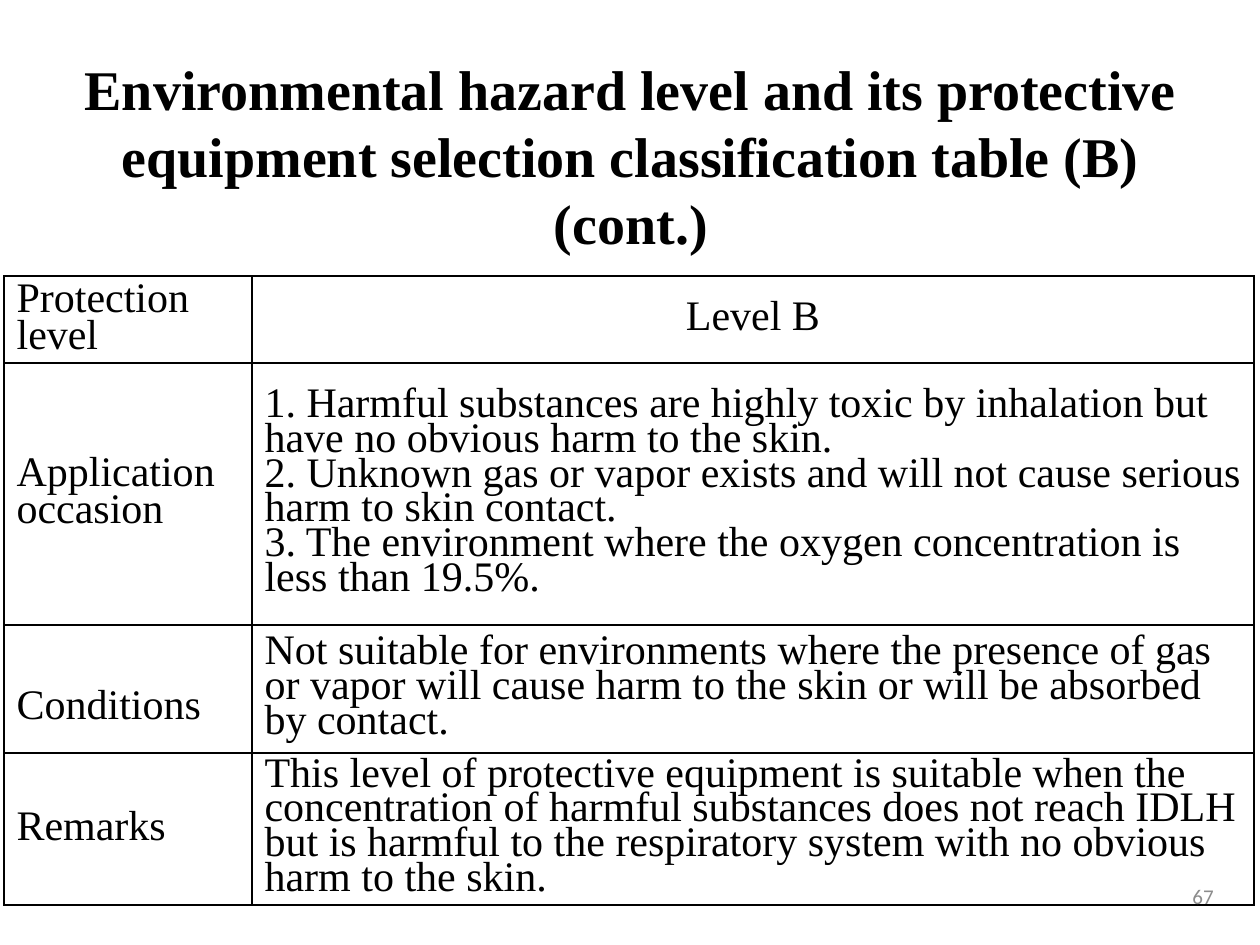
import dataclasses

import lxml.etree
import pptx
import pptx.dml.color
import pptx.enum.text
import pptx.oxml.ns
import pptx.util

EMU_PER_PX = 914400 / 126
ALIGN = pptx.enum.text.PP_ALIGN
ANCHOR = pptx.enum.text.MSO_ANCHOR


@dataclasses.dataclass(frozen=True)
class Theme:
    serif: str = "Times New Roman"
    sans: str = "Calibri"
    ink: str = "000000"
    muted: str = "8C8C8C"
    paper: str = "FFFFFF"
    title_size: int = 32
    table_size: int = 24
    number_size: int = 12
    border_width: int = 1
    label_spacing: float = 0.8
    detail_spacing: float = 0.75


THEME = Theme()

ROWS = [
    ("Protection level", ["Level B"]),
    ("Application occasion", [
        " Harmful substances are highly toxic by inhalation but have no obvious harm to the skin.",
        " Unknown gas or vapor exists and will not cause serious harm to skin contact.",
        " The environment where the oxygen concentration is less than 19.5%.",
    ]),
    ("Conditions", [
        "Not suitable for environments where the presence of gas or vapor will cause "
        "harm to the skin or will be absorbed by contact.",
    ]),
    ("Remarks", [
        "This level of protective equipment is suitable when the concentration of harmful "
        "substances does not reach IDLH but is harmful to the respiratory system with no "
        "obvious harm to the skin.",
    ]),
]
COLUMN_WIDTHS = [248, 1002]
ROW_HEIGHTS = [87, 262, 128, 152]
CONDITIONS_LABEL_DROP = 46


def px(length):
    return pptx.util.Emu(round(length * EMU_PER_PX))


def color(value):
    return pptx.dml.color.RGBColor.from_string(value)


def style_paragraph(para, face, size, ink, align, bold=False):
    para.alignment = align
    para.font.name = face
    para.font.size = pptx.util.Pt(size)
    para.font.bold = bold
    para.font.color.rgb = color(ink)


def add_text(page, box, text, anchor, **style):
    shape = page.shapes.add_textbox(*map(px, box))
    frame = shape.text_frame
    frame.word_wrap = True
    frame.vertical_anchor = anchor
    para = frame.paragraphs[0]
    para.text = text
    style_paragraph(para, **style)


def add_title(page, box):
    add_text(page, box,
             "Environmental hazard level and its protective equipment "
             "selection classification table (B) (cont.)",
             ANCHOR.BOTTOM, face=THEME.serif, size=THEME.title_size,
             ink=THEME.ink, align=ALIGN.CENTER, bold=True)


def add_page_number(page, box):
    add_text(page, box, "67", ANCHOR.MIDDLE, face=THEME.sans,
             size=THEME.number_size, ink=THEME.muted, align=ALIGN.RIGHT)


def number_paragraph(para):
    properties = para._p.get_or_add_pPr()
    properties.set("marL", "0")
    properties.set("indent", "0")
    lxml.etree.SubElement(properties, pptx.oxml.ns.qn("a:buAutoNum"), type="arabicPeriod")


def add_borders(cell):
    qn = pptx.oxml.ns.qn
    properties = cell._tc.get_or_add_tcPr()
    width = str(pptx.util.Pt(THEME.border_width))
    for side in ("a:lnL", "a:lnR", "a:lnT", "a:lnB"):
        line = lxml.etree.SubElement(properties, qn(side), w=width)
        fill = lxml.etree.SubElement(line, qn("a:solidFill"))
        lxml.etree.SubElement(fill, qn("a:srgbClr"), val=THEME.ink)


def fill_cell(cell, texts, spacing, align=ALIGN.LEFT):
    add_borders(cell)
    cell.fill.solid()
    cell.fill.fore_color.rgb = color(THEME.paper)
    cell.vertical_anchor = ANCHOR.MIDDLE
    frame = cell.text_frame
    for index, text in enumerate(texts):
        para = frame.add_paragraph() if index else frame.paragraphs[0]
        para.text = text
        para.line_spacing = spacing
        if len(texts) > 1:
            number_paragraph(para)
        style_paragraph(para, THEME.serif, THEME.table_size, THEME.ink, align)


def add_protection_table(page, left, top):
    box = (left, top, sum(COLUMN_WIDTHS), sum(ROW_HEIGHTS))
    table = page.shapes.add_table(len(ROWS), len(COLUMN_WIDTHS), *map(px, box)).table
    table.first_row = False
    table.horz_banding = False
    for column, width in zip(table.columns, COLUMN_WIDTHS):
        column.width = px(width)
    for index, (label, details) in enumerate(ROWS):
        table.rows[index].height = px(ROW_HEIGHTS[index])
        header = index == 0
        fill_cell(table.cell(index, 0), [label], THEME.label_spacing)
        fill_cell(table.cell(index, 1), details,
                  THEME.label_spacing if header else THEME.detail_spacing,
                  ALIGN.CENTER if header else ALIGN.LEFT)
        if label == "Conditions":
            table.cell(index, 0).margin_top = px(CONDITIONS_LABEL_DROP)


def main():
    deck = pptx.Presentation()
    deck.slide_width, deck.slide_height = px(1260), px(945)
    page = deck.slides.add_slide(deck.slide_layouts[6])
    add_protection_table(page, 4, 276)
    add_title(page, (35, 102, 1192, 160))
    add_page_number(page, (932, 871, 294, 50))
    deck.save("out.pptx")


if __name__ == "__main__":
    main()
